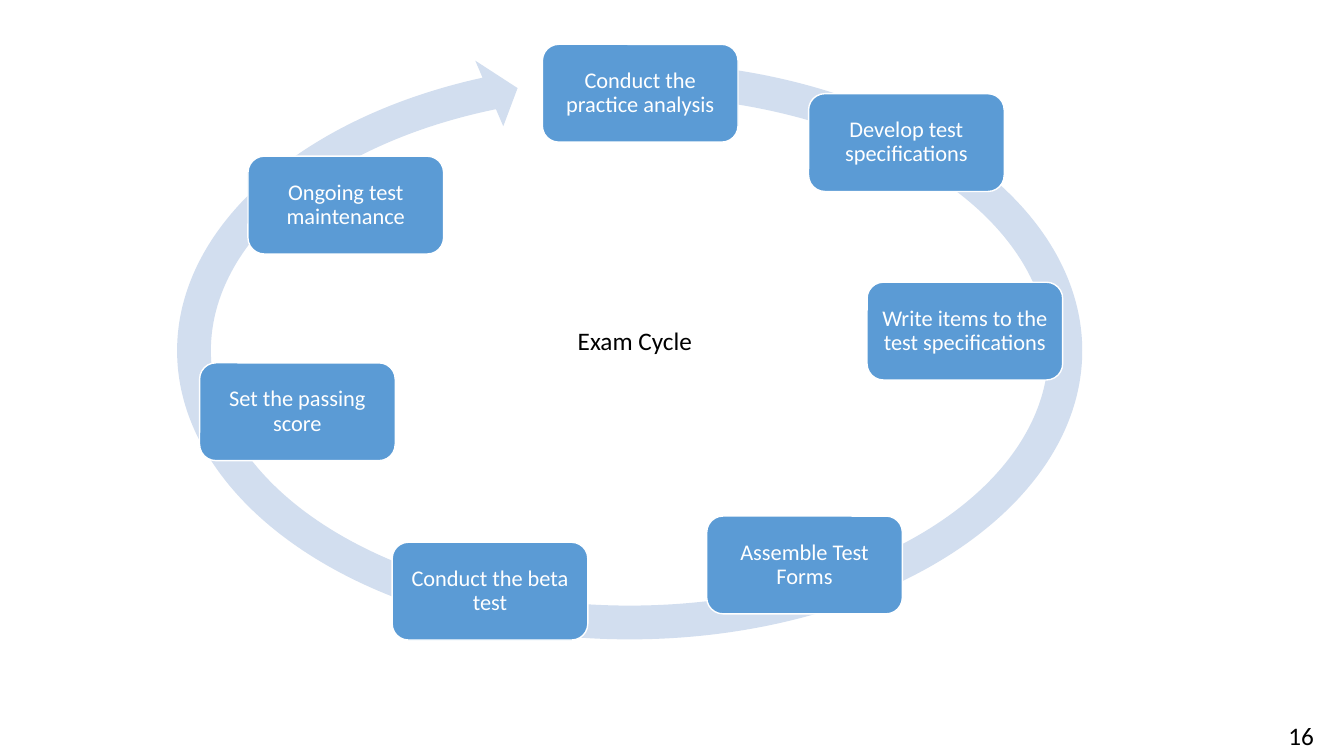
from dataclasses import dataclass

from pptx import Presentation
from pptx.dml.color import RGBColor
from pptx.enum.shapes import MSO_SHAPE
from pptx.enum.text import MSO_ANCHOR, MSO_AUTO_SIZE, PP_ALIGN
from pptx.shapes.autoshape import Shape
from pptx.slide import Slide
from pptx.util import Inches, Pt

CIRCULAR_ARROW = MSO_SHAPE.CIRCULAR_ARROW
ROUNDED_RECTANGLE = MSO_SHAPE.ROUNDED_RECTANGLE
MIDDLE = MSO_ANCHOR.MIDDLE
NO_AUTOFIT = MSO_AUTO_SIZE.NONE
LEFT, CENTER, RIGHT = PP_ALIGN.LEFT, PP_ALIGN.CENTER, PP_ALIGN.RIGHT

COLORS = {"step": "5B9BD5", "cycle": "D2DEEF", "white": "FFFFFF", "black": "000000"}
FONT = "Calibri"
STEP_WIDTH, STEP_HEIGHT, STEP_INSET = 1.94, 0.97, 0.07
CYCLE_ADJUSTMENTS = (0.055, 3.307, 144.831, 169.689, 0.058)
TITLE_ONLY_LAYOUT = 5


@dataclass(frozen=True)
class Step:
    label: str
    left: float
    top: float


STEPS = (
    Step("Conduct the practice analysis", 5.38, 0.44),
    Step("Develop test specifications", 8.02, 0.93),
    Step("Write items to the test specifications", 8.6, 2.8),
    Step("Assemble Test Forms", 7.01, 5.12),
    Step("Conduct the beta test", 3.89, 5.38),
    Step("Set the passing score", 1.98, 3.6),
    Step("Ongoing test maintenance", 2.46, 1.55),
)


def color(name: str) -> RGBColor:
    return RGBColor.from_string(COLORS[name])


def write(holder: Shape, text: str, size: int, ink: str, align: PP_ALIGN) -> None:
    frame = holder.text_frame
    frame.text = text
    frame.word_wrap = True
    frame.auto_size = NO_AUTOFIT
    frame.vertical_anchor = MIDDLE
    paragraph = frame.paragraphs[0]
    paragraph.alignment = align
    paragraph.font.name = FONT
    paragraph.font.size = Pt(size)
    paragraph.font.color.rgb = color(ink)


def draw_cycle(slide: Slide) -> None:
    cycle = slide.shapes.add_shape(
        CIRCULAR_ARROW, Inches(1.57), Inches(0.43), Inches(9.35), Inches(6.1)
    )
    for index, value in enumerate(CYCLE_ADJUSTMENTS):
        cycle.adjustments[index] = value
    cycle.shadow.inherit = False
    cycle.fill.solid()
    cycle.fill.fore_color.rgb = color("cycle")
    cycle.line.fill.background()


def draw_step(slide: Slide, step: Step) -> None:
    box = slide.shapes.add_shape(
        ROUNDED_RECTANGLE,
        Inches(step.left),
        Inches(step.top),
        Inches(STEP_WIDTH),
        Inches(STEP_HEIGHT),
    )
    box.shadow.inherit = False
    box.fill.solid()
    box.fill.fore_color.rgb = color("step")
    box.line.color.rgb = color("white")
    box.line.width = Pt(1)
    write(box, step.label, 16, "white", CENTER)
    frame = box.text_frame
    frame.margin_left = frame.margin_right = Inches(STEP_INSET)
    frame.margin_top = frame.margin_bottom = Inches(STEP_INSET)
    frame.paragraphs[0].line_spacing = 0.9


def draw_title(slide: Slide) -> None:
    title = slide.shapes.title
    title.left, title.top = Inches(5.63), Inches(3.18)
    title.width, title.height = Inches(1.44), Inches(0.4)
    write(title, "Exam Cycle", 18, "black", LEFT)


def draw_page_number(slide: Slide) -> None:
    page_number = slide.shapes.add_textbox(
        Inches(10.13), Inches(7.1), Inches(3), Inches(0.4)
    )
    write(page_number, "16", 18, "black", RIGHT)


def main() -> None:
    deck = Presentation()
    deck.slide_width, deck.slide_height = Inches(13.33), Inches(7.5)
    slide = deck.slides.add_slide(deck.slide_layouts[TITLE_ONLY_LAYOUT])
    draw_page_number(slide)
    draw_cycle(slide)
    for step in STEPS:
        draw_step(slide, step)
    draw_title(slide)
    deck.save("out.pptx")


if __name__ == "__main__":
    main()
